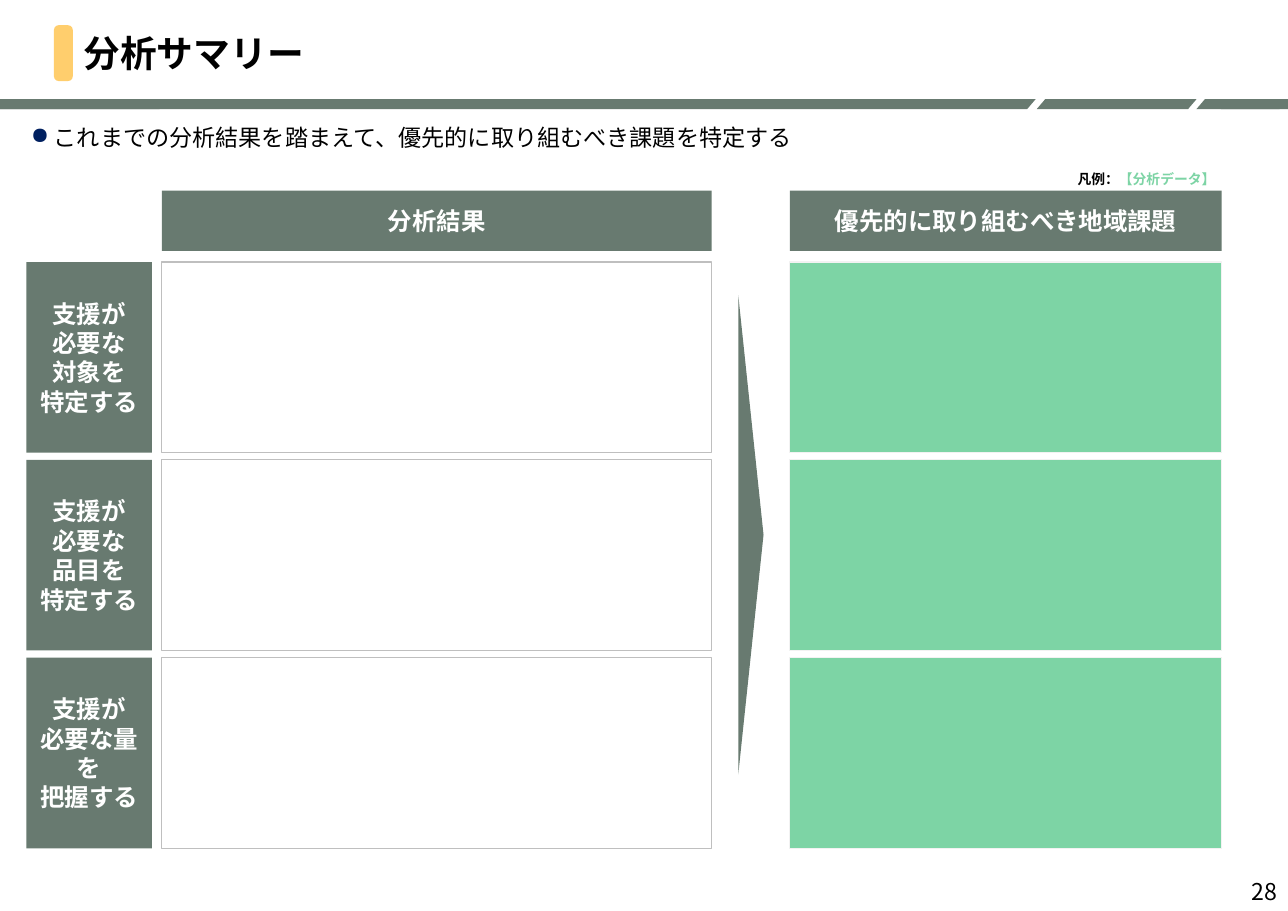
from lxml import etree
from pptx import Presentation
from pptx.dml.color import RGBColor
from pptx.enum.shapes import MSO_SHAPE
from pptx.enum.text import MSO_ANCHOR, PP_ALIGN
from pptx.oxml.ns import qn
from pptx.util import Pt

RECT, ROUND = MSO_SHAPE.RECTANGLE, MSO_SHAPE.ROUNDED_RECTANGLE
SLANT, WEDGE = MSO_SHAPE.PARALLELOGRAM, MSO_SHAPE.ISOSCELES_TRIANGLE
TOP, MID = MSO_ANCHOR.TOP, MSO_ANCHOR.MIDDLE
LEFT, MIDDLE, RIGHT = PP_ALIGN.LEFT, PP_ALIGN.CENTER, PP_ALIGN.RIGHT
GREEN = RGBColor(0x68, 0x7A, 0x70)
MINT = RGBColor(0x7D, 0xD4, 0xA5)
YELLOW = RGBColor(0xFF, 0xCE, 0x6D)
GREY = RGBColor(0xBF, 0xBF, 0xBF)
PALE = RGBColor(0xF2, 0xF2, 0xF2)
WHITE = RGBColor(0xFF, 0xFF, 0xFF)
BLACK = RGBColor(0, 0, 0)
NOTO = "Noto Sans CJK JP"

TITLE = "分析サマリー"
LEAD = "これまでの分析結果を踏まえて、優先的に取り組むべき課題を特定する"
KEY = [("凡例：", BLACK), ("【分析データ】", MINT)]
PAGE = "28"
HEADS = ["分析結果", "優先的に取り組むべき地域課題"]
ROWS = [
    ["支援が", "必要な", "対象を", "特定する"],
    ["支援が", "必要な", "品目を", "特定する"],
    ["支援が", "必要な量を", "把握する"],
]
BARS = [
    (SLANT, 0, 676.8), (SLANT, 677.5, 104.4), (SLANT, 781.9, 59.76),
    (RECT, 0, 104.4), (RECT, 797.8, 43.88),
]
LABEL = (17.2, 82)
COLS = [(105.8, 359.3), (516.2, 282.2)]
STYLES = [(None, GREY), (MINT, PALE)]
HEAD_Y, HEAD_H = 124.6, 39.4
ROW_Y, ROW_H, STEP = 171.3, 124.6, 129.3

deck = Presentation()
deck.slide_width, deck.slide_height = Pt(841.68), Pt(595.44)
slide = deck.slides.add_slide(deck.slide_layouts[6])


def draw(kind, x, y, w, h, fill=None, line=None, adj=None):
    shape = slide.shapes.add_shape(kind, Pt(x), Pt(y), Pt(w), Pt(h))
    shape.shadow.inherit = False
    if fill is None:
        shape.fill.background()
    else:
        shape.fill.solid()
        shape.fill.fore_color.rgb = fill
    if line is None:
        shape.line.fill.background()
    else:
        shape.line.color.rgb = line
        shape.line.width = Pt(0.75)
    if adj is not None:
        shape.adjustments[0] = adj
    return shape


def area(x, y, w, h):
    return slide.shapes.add_textbox(Pt(x), Pt(y), Pt(w), Pt(h))


def bullet(para):
    props = para._p.get_or_add_pPr()
    props.set("marL", str(Pt(15)))
    props.set("indent", str(-Pt(15)))
    tint = etree.SubElement(props, qn("a:buClr"))
    etree.SubElement(tint, qn("a:srgbClr"), val="002060")
    etree.SubElement(props, qn("a:buChar"), char="●")


def write(shape, lines, size=16, color=WHITE, bold=True, font=NOTO,
          align=MIDDLE, anchor=MID, pad=None, dot=False):
    frame = shape.text_frame
    frame.word_wrap = True
    frame.vertical_anchor = anchor
    if pad is not None:
        frame.margin_left = frame.margin_right = Pt(pad)
        frame.margin_top = frame.margin_bottom = Pt(pad)
    for i, line in enumerate(lines):
        para = frame.add_paragraph() if i else frame.paragraphs[0]
        para.alignment = align
        if dot:
            bullet(para)
        parts = [(line, color)] if isinstance(line, str) else line
        for words, tint in parts:
            run = para.add_run()
            run.text = words
            run.font.size, run.font.bold = Pt(size), bold
            run.font.name = font
            run.font.color.rgb = tint
            props = run._r.get_or_add_rPr()
            etree.SubElement(props, qn("a:ea"), typeface=NOTO)


for kind, x, w in BARS:
    draw(kind, x, 64.8, w, 6.5, GREEN, adj=0.85 if kind == SLANT else None)
draw(ROUND, 35.3, 16.5, 12.3, 36.5, YELLOW, adj=0.25)
write(area(47.5, 16.5, 774, 36.5), [TITLE], size=24, color=BLACK,
      font="Arial", align=LEFT)
write(area(17.3, 77.8, 807.8, 24.5), [LEAD], size=15.1, color=BLACK,
      bold=False, align=LEFT, anchor=TOP, pad=2.9, dot=True)
write(area(617, 108, 184.3, 18), [KEY], size=9, font="Arial",
      align=RIGHT, anchor=TOP)

for head, (x, w) in zip(HEADS, COLS):
    write(draw(RECT, x, HEAD_Y, w, HEAD_H, GREEN), [head])

for i, label in enumerate(ROWS):
    y = ROW_Y + i * STEP
    for (x, w), (fill, line) in zip(COLS, STYLES):
        draw(RECT, x, y, w, ROW_H, fill, line)
    x, w = LABEL
    write(draw(RECT, x, y, w, ROW_H, GREEN), label, pad=2.9)

arrow = draw(WEDGE, 334.1, 341.3, 313.2, 16.5, GREEN)
arrow.rotation = 90
write(area(646.6, 569.5, 195, 25.9), [PAGE], size=15.1, color=BLACK,
      bold=False, align=RIGHT)

deck.save("out.pptx")
